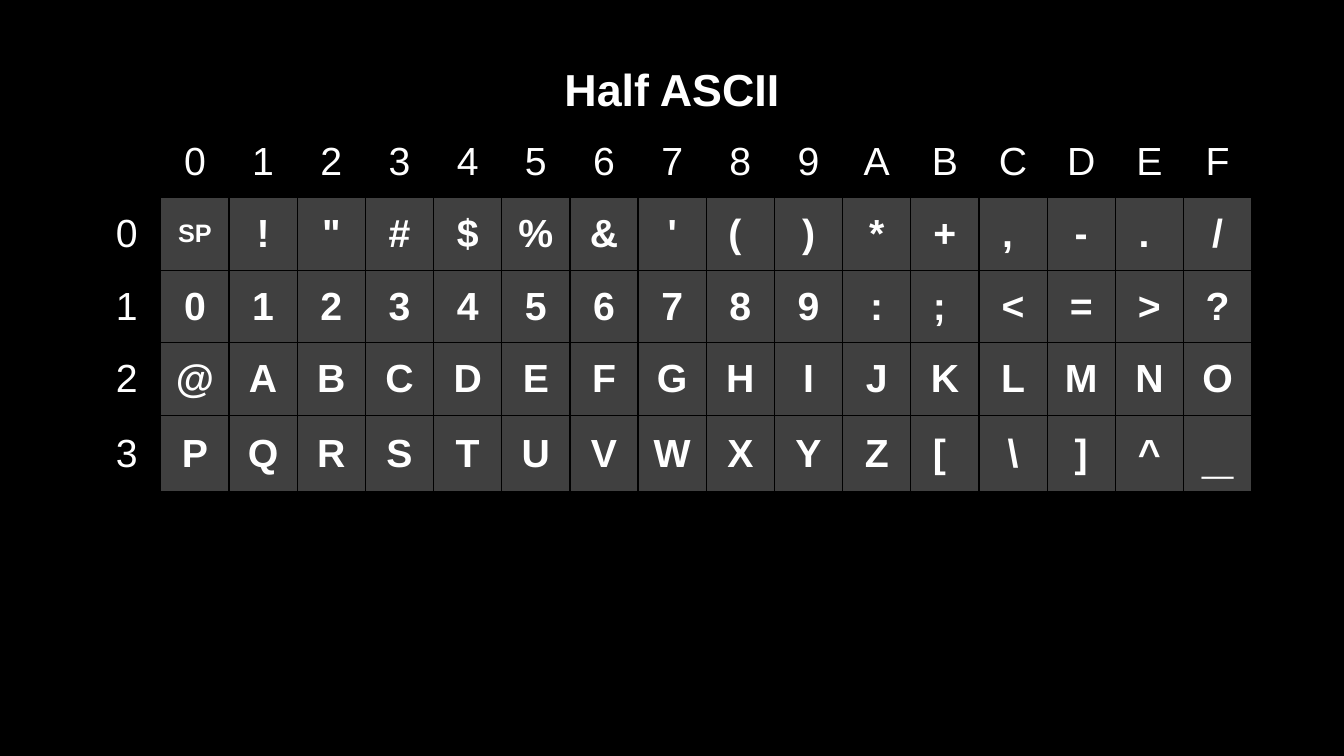
from dataclasses import dataclass

from lxml import etree
from pptx import Presentation
from pptx.dml.color import RGBColor
from pptx.enum.text import MSO_ANCHOR, PP_ALIGN
from pptx.oxml.ns import qn
from pptx.util import Pt

CENTER = PP_ALIGN.CENTER
MIDDLE = MSO_ANCHOR.MIDDLE


@dataclass(frozen=True)
class Theme:
    font: str = "Arial"
    background: str = "000000"
    code_fill: str = "404040"
    text: str = "FFFFFF"
    title_size: int = 32
    cell_size: int = 28
    space_size: int = 18
    underscore_size: int = 40
    border: int = 1


THEME = Theme()
SLIDE_WIDTH, SLIDE_HEIGHT = 960, 540
HEX_DIGITS = "0123456789ABCDEF"
CODE_ROWS = [
    ["SP", *"!\"#$%&'()*+,-./"],
    list("0123456789:;<=>?"),
    list("@ABCDEFGHIJKLMNO"),
    list("PQRSTUVWXYZ[\\]^_"),
]
# These symbols sit left of centre, held there by a trailing space
SPACED_SYMBOLS = "(,.;["
SPECIAL_SIZES = {"SP": THEME.space_size, "_": THEME.underscore_size}


def style_paragraph(paragraph, text, size, bold):
    paragraph.text = text
    paragraph.alignment = CENTER
    font = paragraph.font
    font.name = THEME.font
    font.size = Pt(size)
    font.bold = bold
    font.color.rgb = RGBColor.from_string(THEME.text)


def set_borders(cell):
    properties = cell._tc.get_or_add_tcPr()
    for side in ("lnL", "lnR", "lnT", "lnB"):
        line = etree.SubElement(properties, qn(f"a:{side}"), w=str(Pt(THEME.border)))
        fill = etree.SubElement(line, qn("a:solidFill"))
        etree.SubElement(fill, qn("a:srgbClr"), val=THEME.background)


def fill_cell(cell, text, fill, bold):
    set_borders(cell)
    cell.fill.solid()
    cell.fill.fore_color.rgb = RGBColor.from_string(fill)
    cell.vertical_anchor = MIDDLE
    if text:
        size = SPECIAL_SIZES.get(text, THEME.cell_size)
        shown = text + " " if text in SPACED_SYMBOLS else text
        style_paragraph(cell.text_frame.paragraphs[0], shown, size, bold)


def add_title(slide, left, top, width, height):
    box = slide.shapes.add_textbox(Pt(left), Pt(top), Pt(width), Pt(height))
    frame = box.text_frame
    frame.word_wrap = True
    frame.vertical_anchor = MIDDLE
    style_paragraph(frame.paragraphs[0], "Half ASCII", THEME.title_size, True)


def add_code_table(slide, left, top, width, row_height, last_row_height):
    grid = [["", *HEX_DIGITS]]
    grid += [[str(number), *symbols] for number, symbols in enumerate(CODE_ROWS)]
    row_count, column_count = len(grid), len(grid[0])
    height = row_height * (row_count - 1) + last_row_height
    table = slide.shapes.add_table(
        row_count, column_count, Pt(left), Pt(top), Pt(width), Pt(height)
    ).table
    table.first_row = False
    table.horz_banding = False

    for column in table.columns:
        column.width = Pt(width / column_count)
    for row_index, texts in enumerate(grid):
        is_last = row_index == row_count - 1
        table.rows[row_index].height = Pt(last_row_height if is_last else row_height)
        for column_index, text in enumerate(texts):
            is_code = row_index > 0 and column_index > 0
            fill = THEME.code_fill if is_code else THEME.background
            fill_cell(table.cell(row_index, column_index), text, fill, is_code)


def main():
    presentation = Presentation()
    presentation.slide_width = Pt(SLIDE_WIDTH)
    presentation.slide_height = Pt(SLIDE_HEIGHT)
    slide = presentation.slides.add_slide(presentation.slide_layouts[6])
    background = slide.background.fill
    background.solid()
    background.fore_color.rgb = RGBColor.from_string(THEME.background)

    # Code table with hexadecimal row and column headings
    add_code_table(slide, 66.2, 89.5, 828, 51.8, 54.5)
    # Title across the full width
    add_title(slide, 0, 40.5, SLIDE_WIDTH, 46)

    presentation.save("out.pptx")


if __name__ == "__main__":
    main()
